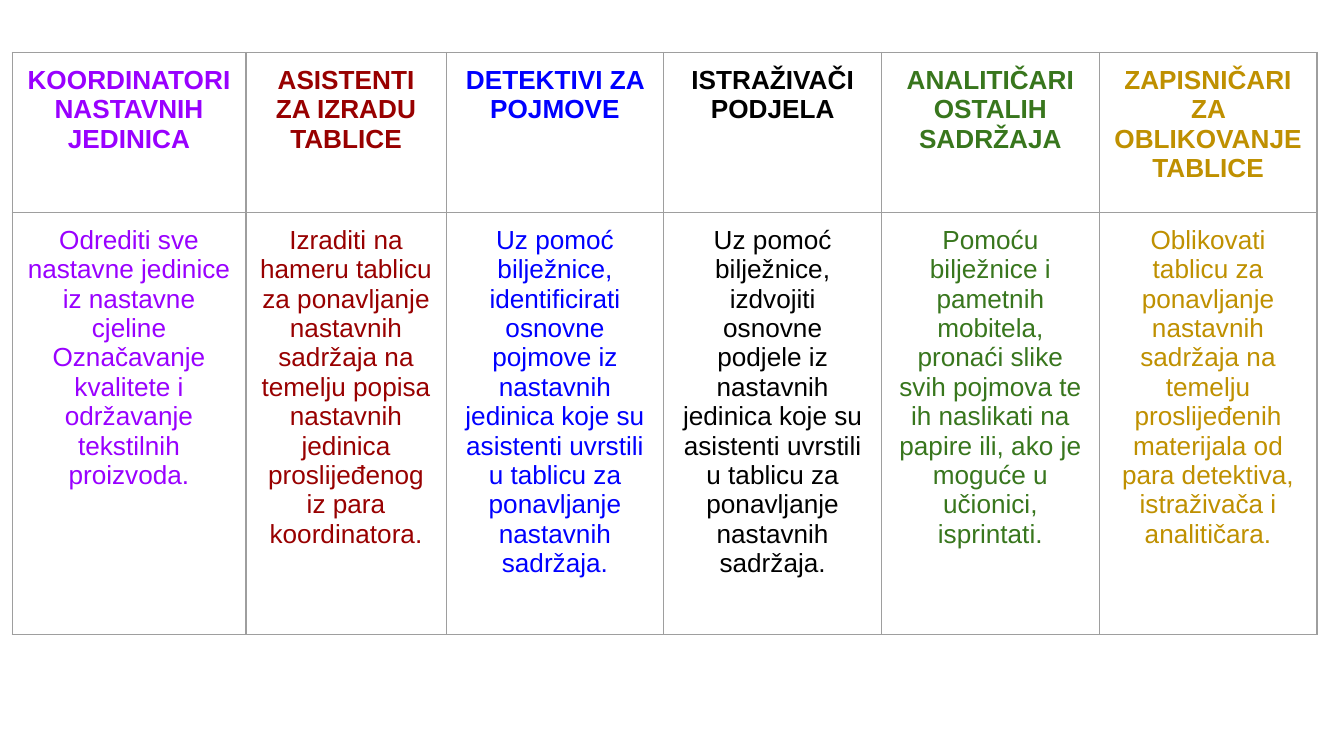
from lxml import etree
from pptx import Presentation
from pptx.dml.color import RGBColor
from pptx.enum import text
from pptx.oxml import ns
from pptx.util import Inches, Pt

COLORS = {
    "purple": "9900FF",
    "red": "980000",
    "blue": "0000FF",
    "black": "000000",
    "green": "38761D",
    "gold": "BF9000",
    "border": "9E9E9E",
}
ROLES = [
    ("purple", 1.74, "KOORDINATORI NASTAVNIH JEDINICA",
     "Odrediti sve nastavne jedinice iz nastavne cjeline Označavanje kvalitete "
     "i održavanje tekstilnih proizvoda."),
    ("red", 1.49, "ASISTENTI ZA IZRADU TABLICE",
     "Izraditi na hameru tablicu za ponavljanje nastavnih sadržaja na temelju "
     "popisa nastavnih jedinica proslijeđenog iz para koordinatora."),
    ("blue", 1.62, "DETEKTIVI ZA POJMOVE",
     "Uz pomoć bilježnice, identificirati osnovne pojmove iz nastavnih jedinica "
     "koje su asistenti uvrstili u tablicu za ponavljanje nastavnih sadržaja."),
    ("black", 1.62, "ISTRAŽIVAČI PODJELA",
     "Uz pomoć bilježnice, izdvojiti osnovne podjele iz nastavnih jedinica "
     "koje su asistenti uvrstili u tablicu za ponavljanje nastavnih sadržaja."),
    ("green", 1.62, "ANALITIČARI OSTALIH SADRŽAJA",
     "Pomoću bilježnice i pametnih mobitela, pronaći slike svih pojmova te ih "
     "naslikati na papire ili, ako je moguće u učionici, isprintati."),
    ("gold", 1.62, "ZAPISNIČARI ZA OBLIKOVANJE TABLICE",
     "Oblikovati tablicu za ponavljanje nastavnih sadržaja na temelju "
     "proslijeđenih materijala od para detektiva, istraživača i analitičara."),
]
ROW_HEIGHTS = [1.19, 3.14]


def draw_borders(cell):
    """Outline all four sides of a cell."""
    properties = cell._tc.get_or_add_tcPr()
    for position, side in enumerate(("lnL", "lnR", "lnT", "lnB")):
        line = etree.Element(ns.qn(f"a:{side}"), w=str(Pt(0.75)))
        fill = etree.SubElement(line, ns.qn("a:solidFill"))
        etree.SubElement(fill, ns.qn("a:srgbClr"), val=COLORS["border"])
        properties.insert(position, line)


def fill_cell(cell, wording, color, bold):
    """Write centred text in an unfilled, bordered cell."""
    cell.fill.background()
    cell.margin_left = cell.margin_right = Inches(0.1)
    cell.margin_top = cell.margin_bottom = Inches(0.1)
    cell.text = wording
    para = cell.text_frame.paragraphs[0]
    para.alignment = text.PP_ALIGN.CENTER
    para.font.name = "Arial"
    para.font.size = Pt(14)
    para.font.bold = bold
    para.font.color.rgb = RGBColor.from_string(COLORS[color])
    draw_borders(cell)


def add_roles_table(page, left, top, width, height):
    """Place the table of roles and their tasks in the given box."""
    frame = page.shapes.add_table(
        len(ROW_HEIGHTS), len(ROLES),
        Inches(left), Inches(top), Inches(width), Inches(height))
    table = frame.table
    table.first_row = table.horz_banding = False
    for row, row_height in zip(table.rows, ROW_HEIGHTS):
        row.height = Inches(row_height * height / sum(ROW_HEIGHTS))
    total = sum(role[1] for role in ROLES)
    for index, (color, share, title, task) in enumerate(ROLES):
        table.columns[index].width = Inches(share * width / total)
        fill_cell(table.cell(0, index), title, color, True)
        fill_cell(table.cell(1, index), task, color, False)


def main():
    """Build and save the deck."""
    deck = Presentation()
    deck.slide_width = Inches(10)
    deck.slide_height = deck.slide_width * 9 // 16
    page = deck.slides.add_slide(deck.slide_layouts[6])
    add_roles_table(page, 0.09, 0.39, 9.71, 4.33)
    deck.save("out.pptx")


if __name__ == "__main__":
    main()
